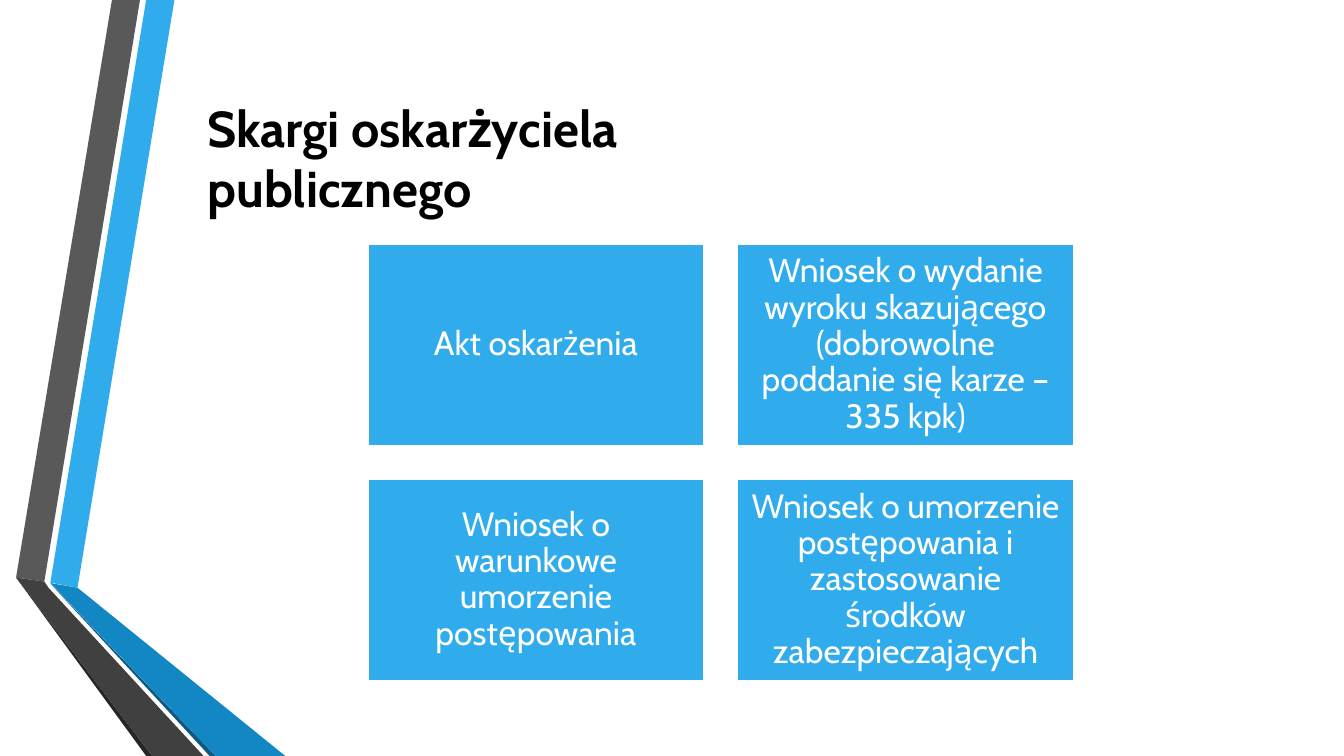
import dataclasses
from typing import Any

import pptx
import pptx.dml.color
import pptx.enum.text
import pptx.util

Pt = pptx.util.Pt

COLOURS = {
    "blue": "30ACEC",
    "dark blue": "1287C3",
    "deep blue": "0C5A82",
    "grey": "595959",
    "dark grey": "404040",
    "deep grey": "262626",
    "white": "FFFFFF",
    "black": "000000",
}


@dataclasses.dataclass(frozen=True)
class Ribbon:
    colour: str
    corners: list[tuple[float, float]]


@dataclasses.dataclass(frozen=True)
class Complaint:
    wording: str
    column: int
    row: int


SLIDE_WIDTH, SLIDE_HEIGHT = 960, 540

RIBBONS = [
    Ribbon("blue", [(36, 416.2), (55.4, 419.8), (124.6, 0), (104.4, 0)]),
    Ribbon("grey", [(100, 0), (80, 0), (11.5, 412.6), (31.7, 415.4)]),
    Ribbon("deep grey", [(11.5, 412.6), (104.4, SLIDE_HEIGHT), (108.7, SLIDE_HEIGHT)]),
    Ribbon("deep blue", [(36, 416.9), (149.8, SLIDE_HEIGHT), (154.1, SLIDE_HEIGHT)]),
    Ribbon("dark blue", [(36, 416.5), (154.1, SLIDE_HEIGHT), (203.8, SLIDE_HEIGHT),
                         (55.4, 419.8)]),
    Ribbon("dark grey", [(145.4, SLIDE_HEIGHT), (34.6, 419.8), (31.7, 415.4),
                         (11.5, 412.6), (108.7, SLIDE_HEIGHT)]),
]

COMPLAINTS = [
    Complaint("Akt oskarżenia", 0, 0),
    Complaint("Wniosek o wydanie wyroku skazującego "
              "(dobrowolne poddanie się karze – 335 kpk)", 1, 0),
    Complaint("Wniosek o warunkowe umorzenie postępowania", 0, 1),
    Complaint("Wniosek o umorzenie postępowania i zastosowanie "
              "środków zabezpieczających", 1, 1),
]

GRID_LEFT, GRID_TOP = 262.8, 174.2
CARD_WIDTH, CARD_HEIGHT, GAP = 240, 144, 24
CARD_INSET = Pt(7.2)

CARD_FRAME = {
    "word_wrap": True,
    "vertical_anchor": pptx.enum.text.MSO_ANCHOR.MIDDLE,
    "margin_left": CARD_INSET,
    "margin_right": CARD_INSET,
    "margin_top": CARD_INSET,
    "margin_bottom": CARD_INSET,
}
CARD_PARAGRAPH = {"alignment": pptx.enum.text.PP_ALIGN.CENTER, "line_spacing": 0.9}
CARD_FONT = {"name": "Cabin", "size": Pt(24)}

TITLE_FRAME = {"word_wrap": True}
TITLE_FONT = {"name": "Cabin", "size": Pt(36), "bold": True}


def rgb(colour: str) -> pptx.dml.color.RGBColor:
    return pptx.dml.color.RGBColor.from_string(COLOURS[colour])


def apply_format(target: Any, values: dict[str, Any]) -> None:
    for attribute, value in values.items():
        setattr(target, attribute, value)


def fill_solid(shape: Any, colour: str) -> None:
    shape.shadow.inherit = False
    shape.fill.solid()
    shape.fill.fore_color.rgb = rgb(colour)


def write(frame: Any, wording: str, colour: str, frame_format: dict[str, Any],
          paragraph_format: dict[str, Any], font_format: dict[str, Any]) -> None:
    apply_format(frame, frame_format)
    paragraph = frame.paragraphs[0]
    apply_format(paragraph, paragraph_format)
    run = paragraph.add_run()
    run.text = wording
    apply_format(run.font, font_format)
    run.font.color.rgb = rgb(colour)


def draw_ribbon(slide: Any, ribbon: Ribbon) -> None:
    start, *rest = [(Pt(x), Pt(y)) for x, y in ribbon.corners]
    builder = slide.shapes.build_freeform(*start)
    builder.add_line_segments(rest, close=True)
    band = builder.convert_to_shape()
    fill_solid(band, ribbon.colour)
    band.line.fill.background()


def draw_complaint(slide: Any, complaint: Complaint) -> None:
    card = slide.shapes.add_shape(
        pptx.enum.shapes.MSO_SHAPE.RECTANGLE,
        Pt(GRID_LEFT + complaint.column * (CARD_WIDTH + GAP)),
        Pt(GRID_TOP + complaint.row * (CARD_HEIGHT + GAP)),
        Pt(CARD_WIDTH), Pt(CARD_HEIGHT))
    fill_solid(card, "blue")
    card.line.color.rgb = rgb("white")
    card.line.width = Pt(1.25)
    write(card.text_frame, complaint.wording, "white",
          CARD_FRAME, CARD_PARAGRAPH, CARD_FONT)


def main() -> None:
    presentation = pptx.Presentation()
    presentation.slide_width = Pt(SLIDE_WIDTH)
    presentation.slide_height = Pt(SLIDE_HEIGHT)
    slide = presentation.slides.add_slide(presentation.slide_layouts[6])

    # Folded ribbons along the left edge
    for ribbon in RIBBONS:
        draw_ribbon(slide, ribbon)

    # Grid of complaints
    for complaint in COMPLAINTS:
        draw_complaint(slide, complaint)

    # Title
    title = slide.shapes.add_textbox(Pt(141.1), Pt(65.5), Pt(433.4), Pt(94.3))
    write(title.text_frame, "Skargi oskarżyciela publicznego", "black",
          TITLE_FRAME, {}, TITLE_FONT)

    presentation.save("out.pptx")


if __name__ == "__main__":
    main()
